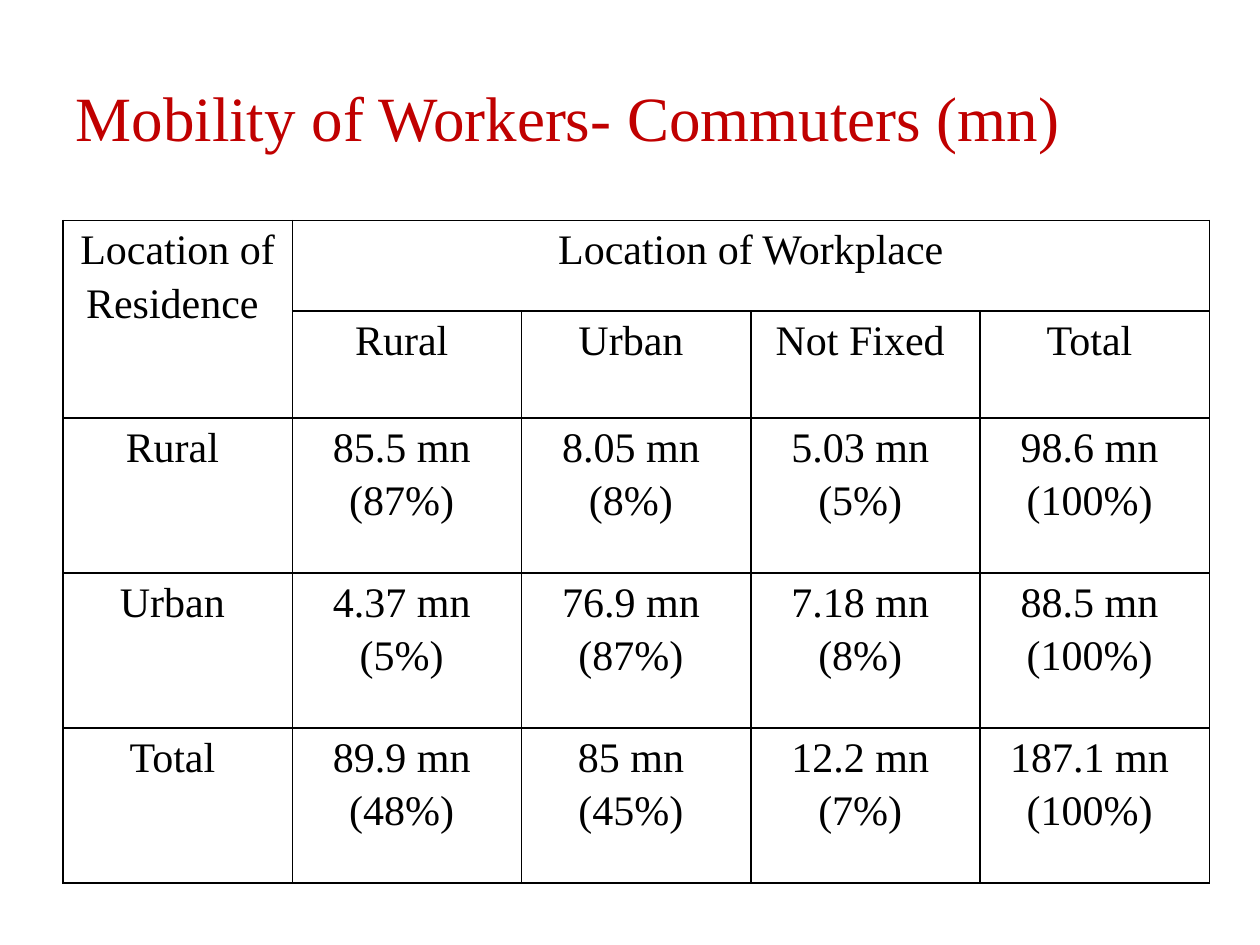
from dataclasses import dataclass

from lxml.etree import SubElement
from pptx import Presentation
from pptx.dml.color import RGBColor
from pptx.enum.text import MSO_ANCHOR as Anchor, PP_ALIGN as Align
from pptx.oxml.ns import qn
from pptx.util import Emu, Pt

PX = 9144
FONT = "Times New Roman"
BLACK, RED = "000000", "C00000"
COLUMN_WIDTH = 182
ROW_HEIGHTS = (72, 72, 123, 123, 123)


@dataclass(frozen=True)
class Entry:
    """A table entry with its lines of text and its span."""
    row: int
    column: int
    lines: tuple[str, ...]
    rows: int = 1
    columns: int = 1


HEADINGS = (
    Entry(0, 0, ("Location of Residence ",), rows=2),
    Entry(0, 1, ("Location of Workplace",), columns=4),
)
DESTINATIONS = ("Rural", "Urban", "Not Fixed", "Total")
COMMUTERS = {
    "Rural": (("85.5", 87), ("8.05", 8), ("5.03", 5), ("98.6", 100)),
    "Urban": (("4.37", 5), ("76.9", 87), ("7.18", 8), ("88.5", 100)),
    "Total": (("89.9", 48), ("85", 45), ("12.2", 7), ("187.1", 100)),
}


def px(length: int) -> Emu:
    """Turn a length in px, 100 to the inch, into EMU."""
    return Emu(length * PX)


def color(value: str) -> RGBColor:
    """Turn a hex string into a colour."""
    return RGBColor.from_string(value)


def format_paragraph(paragraph, size: int, hex_color: str, alignment: Align) -> None:
    """Set the font and alignment of a paragraph."""
    paragraph.alignment = alignment
    paragraph.font.name = FONT
    paragraph.font.size = Pt(size)
    paragraph.font.color.rgb = color(hex_color)


def add_borders(cell) -> None:
    """Draw a thin black line on every side of a cell."""
    properties = cell._tc.get_or_add_tcPr()
    for side in ("lnL", "lnR", "lnT", "lnB"):
        line = SubElement(properties, qn(f"a:{side}"), w=str(Pt(1)))
        fill = SubElement(line, qn("a:solidFill"))
        SubElement(fill, qn("a:srgbClr"), val=BLACK)


def draw_entry(table, entry: Entry) -> None:
    """Write an entry into its cell, merged over its span."""
    cell = table.cell(entry.row, entry.column)
    if entry.rows > 1 or entry.columns > 1:
        cell.merge(table.cell(entry.row + entry.rows - 1, entry.column + entry.columns - 1))
    cell.text = "\n".join(entry.lines)
    for paragraph in cell.text_frame.paragraphs:
        format_paragraph(paragraph, 24, BLACK, Align.CENTER)
        paragraph.line_spacing = 1.15


def list_entries() -> list[Entry]:
    """Collect the headings and the figures of the table."""
    entries = list(HEADINGS)
    entries += [Entry(1, column, (f"{name} ",)) for column, name in enumerate(DESTINATIONS, 1)]
    for row, (residence, figures) in enumerate(COMMUTERS.items(), 2):
        entries.append(Entry(row, 0, (f"{residence} ",)))
        entries += [
            Entry(row, column, (f"{workers} mn ", f"({share}%) "))
            for column, (workers, share) in enumerate(figures, 1)
        ]
    return entries


def draw_title(slide, text: str) -> None:
    """Place and format the title."""
    title = slide.shapes.title
    title.left, title.top, title.width, title.height = map(px, (50, 30, 915, 125))
    title.text_frame.text = text
    title.text_frame.vertical_anchor = Anchor.MIDDLE
    format_paragraph(title.text_frame.paragraphs[0], 36, RED, Align.LEFT)


def draw_table(slide) -> None:
    """Build the grid of commuters."""
    columns = len(DESTINATIONS) + 1
    table = slide.shapes.add_table(
        len(ROW_HEIGHTS), columns, px(50), px(175),
        px(columns * COLUMN_WIDTH), px(sum(ROW_HEIGHTS)),
    ).table
    table.first_row = table.horz_banding = False
    for column in table.columns:
        column.width = px(COLUMN_WIDTH)
    for row, height in zip(table.rows, ROW_HEIGHTS):
        row.height = px(height)
    for cell in table.iter_cells():
        add_borders(cell)
        cell.fill.background()
        cell.margin_left = cell.margin_right = px(7)
        cell.margin_top = cell.margin_bottom = 0
    for entry in list_entries():
        draw_entry(table, entry)


def main() -> None:
    """Build and save the presentation."""
    presentation = Presentation()
    presentation.slide_width, presentation.slide_height = px(1000), px(750)
    slide = presentation.slides.add_slide(presentation.slide_layouts[5])
    draw_title(slide, "Mobility of Workers- Commuters (mn)")
    draw_table(slide)
    presentation.save("out.pptx")


if __name__ == "__main__":
    main()
